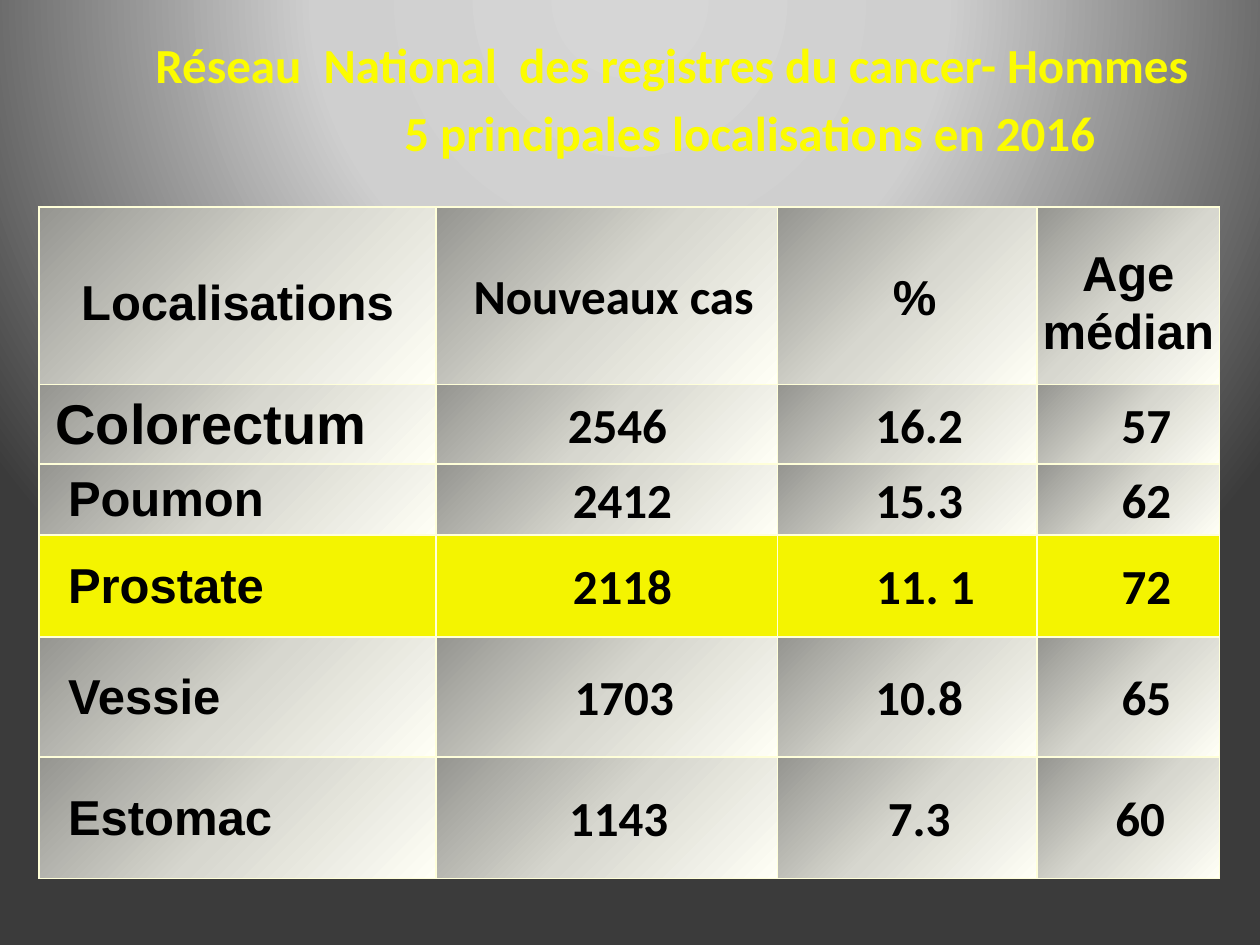
from lxml import etree
from pptx import Presentation
from pptx.dml.color import RGBColor
from pptx.enum import text
from pptx.oxml import ns
from pptx.util import Inches, Pt

theme = {
    "title": "FCFC00", "ink": "000000", "border": "FFFFD9", "highlight": "F4F400",
    "cell": [(0, "959590"), (50, "D7D7CF"), (100, "FFFFF6")],
    "back": [(0, "D6D6D6"), (40, "CFCFCF"), (100, "3B3B3B")],
    "size": 28, "large": 32, "label": "Arial", "value": "Calibri",
}


def gradient(stops, shade):
    gs = "".join(f'<a:gs pos="{pos * 1000}"><a:srgbClr val="{c}"/></a:gs>' for pos, c in stops)
    return etree.fromstring(
        f'<a:gradFill {ns.nsdecls("a")} rotWithShape="1"><a:gsLst>{gs}</a:gsLst>{shade}</a:gradFill>')


def write(p, words, font, size, color, indent, spacing, align):
    p.alignment = align
    p.line_spacing = spacing
    p._p.get_or_add_pPr().set("marL", str(Inches(indent)))
    p._p.get_or_add_pPr().set("indent", "0")
    r = p.add_run()
    r.text = words
    r.font.name, r.font.size, r.font.bold = font, Pt(size), True
    r.font.color.rgb = RGBColor.from_string(color)


prs = Presentation()
prs.slide_width, prs.slide_height = Inches(10), Inches(7.5)
W, H = prs.slide_width / 100, prs.slide_height / 100
s = prs.slides.add_slide(prs.slide_layouts[6])
CENTER, LEFT = text.PP_ALIGN.CENTER, text.PP_ALIGN.LEFT

s.background.fill.solid()
solid = s._element.find(".//" + ns.qn("p:bgPr")).find(ns.qn("a:solidFill"))
solid.getparent().replace(solid, gradient(
    theme["back"],
    '<a:path path="circle"><a:fillToRect l="50000" t="-80000" r="50000" b="180000"/></a:path>'))

col_shares = [31.5, 27.1, 20.6, 14.5]
row_shares = [18.8, 8.4, 7.5, 10.8, 12.7, 12.9]
rows = [
    [("Localisations", 0), ("Nouveaux cas", 0.11), ("%", 0.12), ("Age médian", 0)],
    [("Colorectum", 0.12), ("2546", 0.17), ("16.2", 0.19), ("57", 0.29)],
    [("Poumon", 0.22), ("2412", 0.25), ("15.3", 0.19), ("62", 0.29)],
    [("Prostate", 0.22), ("2118", 0.25), ("11. 1", 0.29), ("72", 0.29)],
    [("Vessie", 0.22), ("1703", 0.28), ("10.8", 0.19), ("65", 0.29)],
    [("Estomac", 0.22), ("1143", 0.19), ("7.3", 0.19), ("60", 0.19)],
]

table = s.shapes.add_table(
    len(rows), len(col_shares), int(3.1 * W), int(21.9 * H),
    int(sum(col_shares) * W), int(sum(row_shares) * H)).table
table.first_row = table.horz_banding = False
for column, share in zip(table.columns, col_shares):
    column.width = int(share * W)
for row, share in zip(table.rows, row_shares):
    row.height = int(share * H)

for i, row in enumerate(rows):
    for j, (words, indent) in enumerate(row):
        cell = table.cell(i, j)
        header, label = i == 0, j == 0
        cell.vertical_anchor = text.MSO_ANCHOR.MIDDLE
        cell.margin_left = cell.margin_right = Inches(0.01)
        cell.margin_top = Inches(0.1 if header and j in (0, 3) else 0.01)
        cell.margin_bottom = 0
        p = cell.text_frame.paragraphs[0]
        if not label:
            p.space_before = Pt(2.5 if header else 4)
        write(p, words,
              theme["label"] if label or header and j > 1 else theme["value"],
              theme["large"] if words == "Colorectum" else theme["size"], theme["ink"], indent,
              1.06 if header else 1.0 if label else 1.05,
              LEFT if label and not header else CENTER)
        tcPr = cell._tc.get_or_add_tcPr()
        for side in ("lnL", "lnR", "lnT", "lnB"):
            tcPr.append(etree.fromstring(
                f'<a:{side} {ns.nsdecls("a")} w="{Pt(1)}"><a:solidFill>'
                f'<a:srgbClr val="{theme["border"]}"/></a:solidFill></a:{side}>'))
        if row[0][0] == "Prostate":
            cell.fill.solid()
            cell.fill.fore_color.rgb = RGBColor.from_string(theme["highlight"])
        else:
            tcPr.append(gradient(theme["cell"], '<a:lin ang="2700000" scaled="0"/>'))

title = s.shapes.add_textbox(int(5.5 * W), int(2.1 * H), int(90.6 * W), int(15.7 * H))
tf = title.text_frame
tf.word_wrap = True
write(tf.paragraphs[0], "Réseau  National  des registres du cancer- Hommes",
      theme["value"], theme["size"], theme["title"], 0.5, 1.15, CENTER)
p = tf.add_paragraph()
p.space_after = Pt(10)
write(p, "5 principales localisations en 2016",
      theme["value"], theme["size"], theme["title"], 1.74, 1.15, CENTER)

prs.save("out.pptx")
